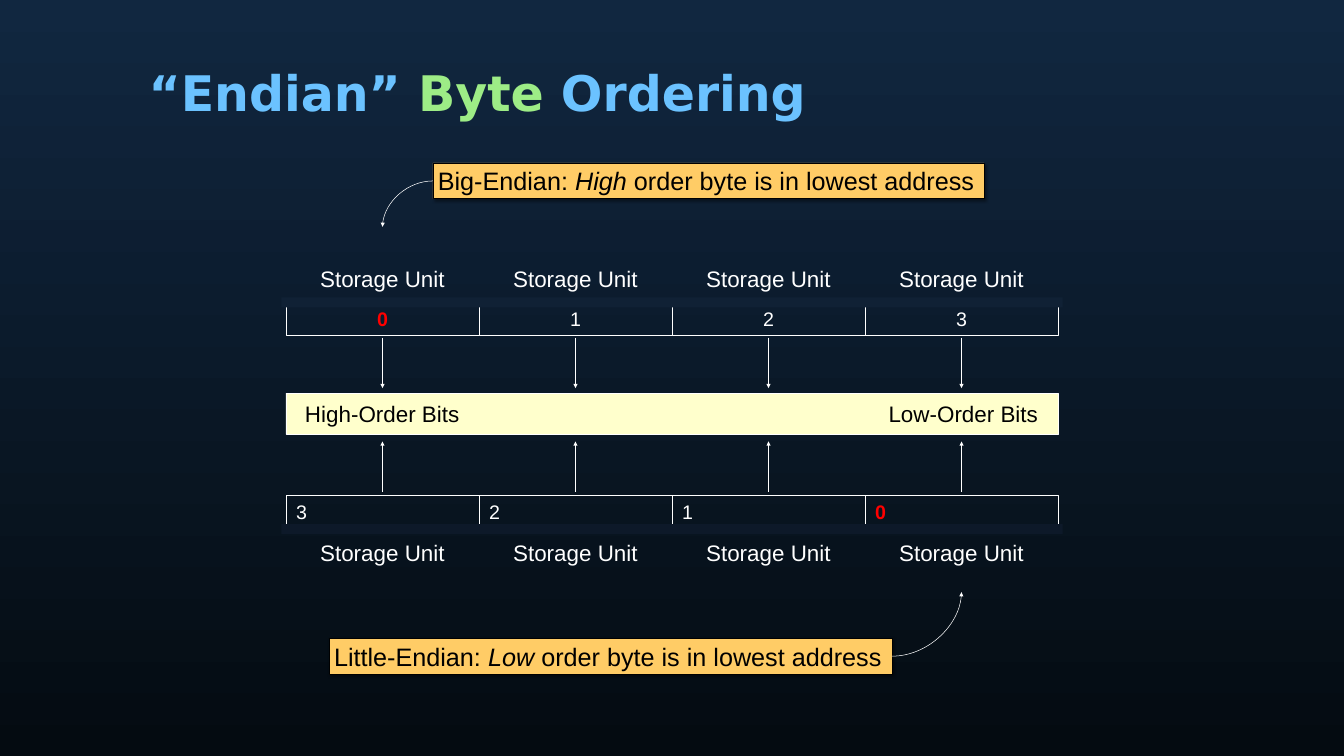
from lxml.etree import SubElement
from pptx import Presentation
from pptx.dml.color import RGBColor as Rgb
from pptx.enum.shapes import MSO_CONNECTOR as Link, MSO_SHAPE as Preset
from pptx.enum.text import MSO_ANCHOR as Anchor, PP_ALIGN as Align
from pptx.oxml.ns import qn
from pptx.util import Inches, Pt

COLORS = {
    "top": "112740", "bottom": "040B11", "blue": "6BC2FF", "green": "9DEC86",
    "white": "FFFFFF", "black": "000000", "red": "FF0000", "callout": "FFCC66",
    "word": "FFFFCC", "upper_mask": "102135", "lower_mask": "0D1929",
}
RGB = {name: Rgb.from_string(value) for name, value in COLORS.items()}
WIDTH, HEIGHT = 26.67, 15
UNITS, COLUMN, CELL = 4, 3.83, 0.67
LEFT = (WIDTH - UNITS * COLUMN) / 2
CENTERS = [LEFT + COLUMN * (unit + 0.5) for unit in range(UNITS)]
UPPER, WORD, LOWER = 5.98, 7.8, 9.82

prs = Presentation()
prs.slide_width, prs.slide_height = Inches(WIDTH), Inches(HEIGHT)
slide = prs.slides.add_slide(prs.slide_layouts[6])
backdrop = slide.background.fill
backdrop.gradient()
backdrop.gradient_angle = 270
for stop, name in zip(backdrop.gradient_stops, ("top", "bottom")):
    stop.color.rgb = RGB[name]


def place(box, runs=(), size=32, fill=None, line=None, align=Align.CENTER,
          inset=0.2, font="Arial", wrap=False):
    area = [Inches(length) for length in box]
    if fill or line:
        item = slide.shapes.add_shape(Preset.RECTANGLE, *area)
        item.shadow.inherit = False
        item.fill.background()
        item.line.fill.background()
        if fill:
            item.fill.solid()
            item.fill.fore_color.rgb = RGB[fill]
        if line:
            item.line.color.rgb = RGB[line]
            item.line.width = Pt(0.75)
    else:
        item = slide.shapes.add_textbox(*area)
    frame = item.text_frame
    frame.word_wrap = wrap
    frame.vertical_anchor = Anchor.TOP
    frame.margin_left = frame.margin_right = Inches(inset)
    frame.margin_top = frame.margin_bottom = Inches(inset / 2)
    paragraph = frame.paragraphs[0]
    paragraph.alignment = align
    for text, color, bold, italic in runs:
        run = paragraph.add_run()
        run.text = text
        run.font.name, run.font.size = font, Pt(size)
        run.font.bold, run.font.italic = bold, italic
        run.font.color.rgb = RGB[color]
    return item


def arrow(start, end, kind=Link.STRAIGHT, width=1):
    link = slide.shapes.add_connector(
        kind, *[Inches(length) for length in (*start, *end)])
    link.line.color.rgb = RGB["white"]
    link.line.width = Pt(width)
    props = link._element.spPr
    SubElement(props.find(qn("a:ln")), qn("a:tailEnd"), type="triangle")
    SubElement(props, qn("a:effectLst"))
    if kind == Link.CURVE:
        props.find(qn("a:prstGeom")).set("prst", "curvedConnector2")


title = place((2.75, 0.99, 21.17, 1.57), [
    ("“Endian” ", "blue", True, False),
    ("Byte ", "green", True, False),
    ("Ordering", "blue", True, False),
], size=70, align=Align.LEFT, font="DejaVu Sans", wrap=True)
title.text_frame.vertical_anchor = Anchor.MIDDLE
title.text_frame.paragraphs[0].line_spacing = 1.1

callouts = [
    ((8.59, 3.23, 10.94, 0.71), "Big-Endian: ", "High"),
    ((6.53, 12.67, 11.17, 0.71), "Little-Endian: ", "Low"),
]
for box, order, byte in callouts:
    callout = place(box, [
        (order, "black", False, False),
        (byte, "black", False, True),
        (" order byte is in lowest address", "black", False, False),
    ], size=36, fill="callout", line="black", align=Align.LEFT, inset=0.1)
    effects = callout._element.spPr.find(qn("a:effectLst"))
    shadow = SubElement(effects, qn("a:outerShdw"), blurRad=str(Pt(4)),
                        dist=str(Pt(3)), dir="2700000", rotWithShape="0")
    shade = SubElement(shadow, qn("a:srgbClr"), val=COLORS["black"])
    SubElement(shade, qn("a:alpha"), val="40000")

arrow((8.59, 3.59), (CENTERS[0], 4.5), Link.CURVE, 0.75)
arrow((17.7, 13.02), (CENTERS[-1], 11.75), Link.CURVE, 0.75)

place((LEFT, WORD, UNITS * COLUMN, 0.82), fill="word", line="white")
for left, width, bits in ((5.94, 3.29, "High-Order Bits"),
                          (17.52, 3.19, "Low-Order Bits")):
    place((left, WORD + 0.09, width, 0.64),
          [(bits, "black", False, False)], inset=0.1)

rows = [
    (UPPER, 5.16, 6.7, 7.7, range(UNITS), Align.CENTER),
    (LOWER, 10.59, 9.76, 8.76, reversed(range(UNITS)), Align.LEFT),
]
for top, label_top, tail, head, addresses, align in rows:
    for center, address in zip(CENTERS, addresses):
        lowest = address == 0
        place((center - 1.45, label_top, 2.9, 0.74),
              [("Storage Unit", "white", False, False)])
        place((center - COLUMN / 2, top, COLUMN, CELL),
              [(str(address), "red" if lowest else "white", lowest, False)],
              size=28, line="white", align=align, wrap=True)
        arrow((center, tail), (center, head))

for top, mask in ((5.9, "upper_mask"), (10.4, "lower_mask")):
    place((LEFT - 0.09, top, 15.5, 0.2), fill=mask)

prs.save("out.pptx")
